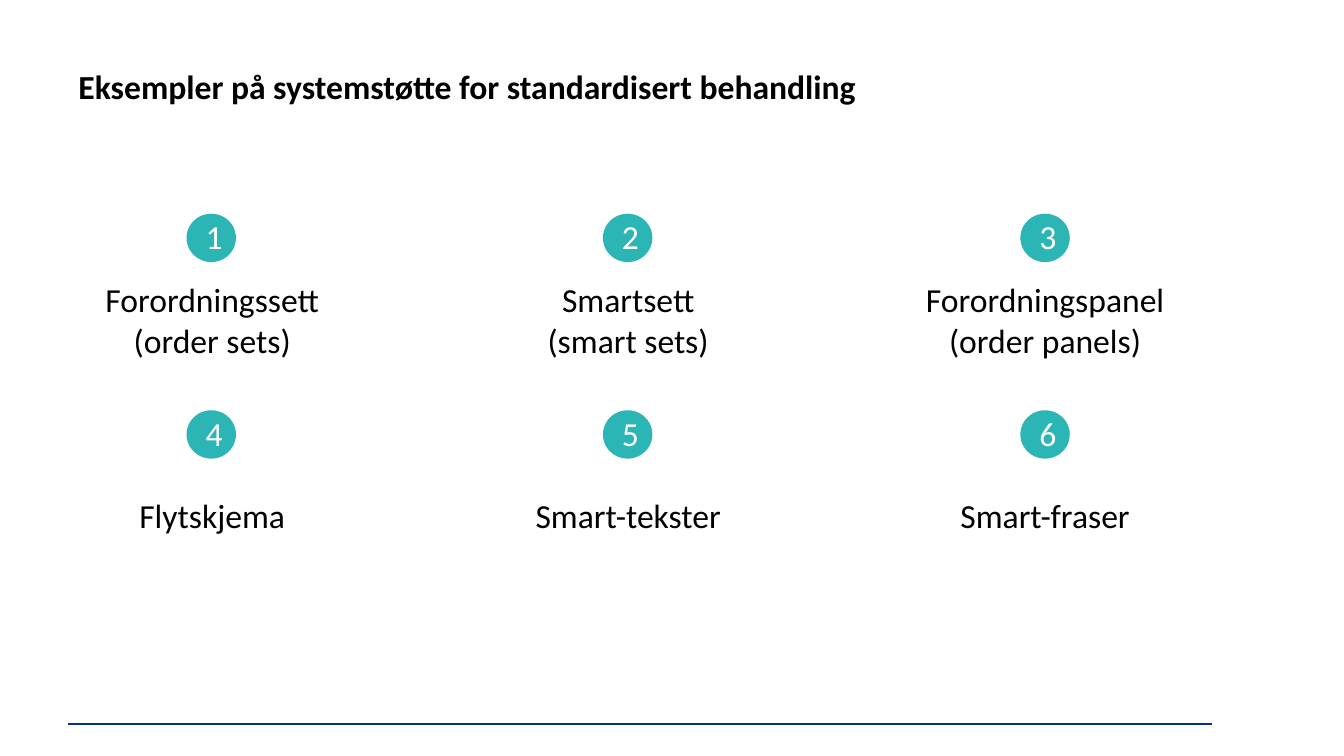
from dataclasses import dataclass

from lxml import etree
from pptx import Presentation
from pptx import util as u
from pptx.dml.color import RGBColor
from pptx.enum import shapes, text
from pptx.oxml.ns import qn


@dataclass(frozen=True)
class Theme:
    font: str = "Calibri"
    size: int = 24
    ink: str = "000000"
    white: str = "FFFFFF"
    teal: str = "2CB5B5"
    navy: str = "043585"
    rule: float = 1.25


THEME = Theme()

# Columns: disc left, label left, label width
COLS = [(1.85, 0.69, 2.83), (5.98, 5.09, 2.28), (10.12, 8.99, 2.75)]

# Rows: disc top, digit top, label top, label height, labels
ROWS = [
    (2.12, 2.09, 2.72, 0.91,
     ["Forordningssett (order sets)", "Smartsett (smart sets)",
      "Forordningspanel (order panels)"]),
    (4.07, 4.05, 4.86, 0.5, ["Flytskjema", "Smart-tekster", "Smart-fraser"]),
]


def add_text(parent, box, words, align=text.PP_ALIGN.CENTER, color=THEME.ink, bold=False):
    frame = parent.add_textbox(*map(u.Inches, box)).text_frame
    frame.word_wrap = True
    par = frame.paragraphs[0]
    par.alignment = align
    run = par.add_run()
    run.text = words
    style = {"name": THEME.font, "size": u.Pt(THEME.size), "bold": bold}
    for key, value in style.items():
        setattr(run.font, key, value)
    run.font.color.rgb = RGBColor.from_string(color)


def add_disc(parent, left, top):
    box = map(u.Inches, (left, top, 0.49, 0.48))
    disc = parent.add_shape(shapes.MSO_SHAPE.OVAL, *box)
    disc.shadow.inherit = False
    disc.fill.solid()
    disc.fill.fore_color.rgb = RGBColor.from_string(THEME.teal)
    disc.line.fill.background()


def add_rule(parent, left, right, top):
    ends = map(u.Inches, (left, top, right, top))
    rule = parent.add_connector(shapes.MSO_CONNECTOR.STRAIGHT, *ends)
    rule.line.color.rgb = RGBColor.from_string(THEME.navy)
    rule.line.width = u.Pt(THEME.rule)
    etree.SubElement(rule._element.spPr, qn("a:effectLst"))


def add_item(parent, number, label, col, row):
    left, start, width = col
    top, digit, base, height, _ = row
    group = parent.add_group_shape().shapes
    add_disc(group, left, top)
    add_text(group, (left + 0.09, digit, 0.31, 0.5), str(number), color=THEME.white)
    add_text(group, (start, base, width, height), label)


def main():
    deck = Presentation()
    deck.slide_width, deck.slide_height = u.Inches(13.33), u.Inches(7.5)
    parts = deck.slides.add_slide(deck.slide_layouts[6]).shapes

    # Footer rule and title
    add_rule(parts, 0.67, 12.02, 7.18)
    add_text(parts, (0.68, 0.6, 11.18, 0.5),
             "Eksempler på systemstøtte for standardisert behandling",
             text.PP_ALIGN.LEFT, bold=True)

    # Numbered items, three to a row
    for r, row in enumerate(ROWS):
        for c, (col, label) in enumerate(zip(COLS, row[-1])):
            add_item(parts, r * len(COLS) + c + 1, label, col, row)

    deck.save("out.pptx")


if __name__ == "__main__":
    main()
